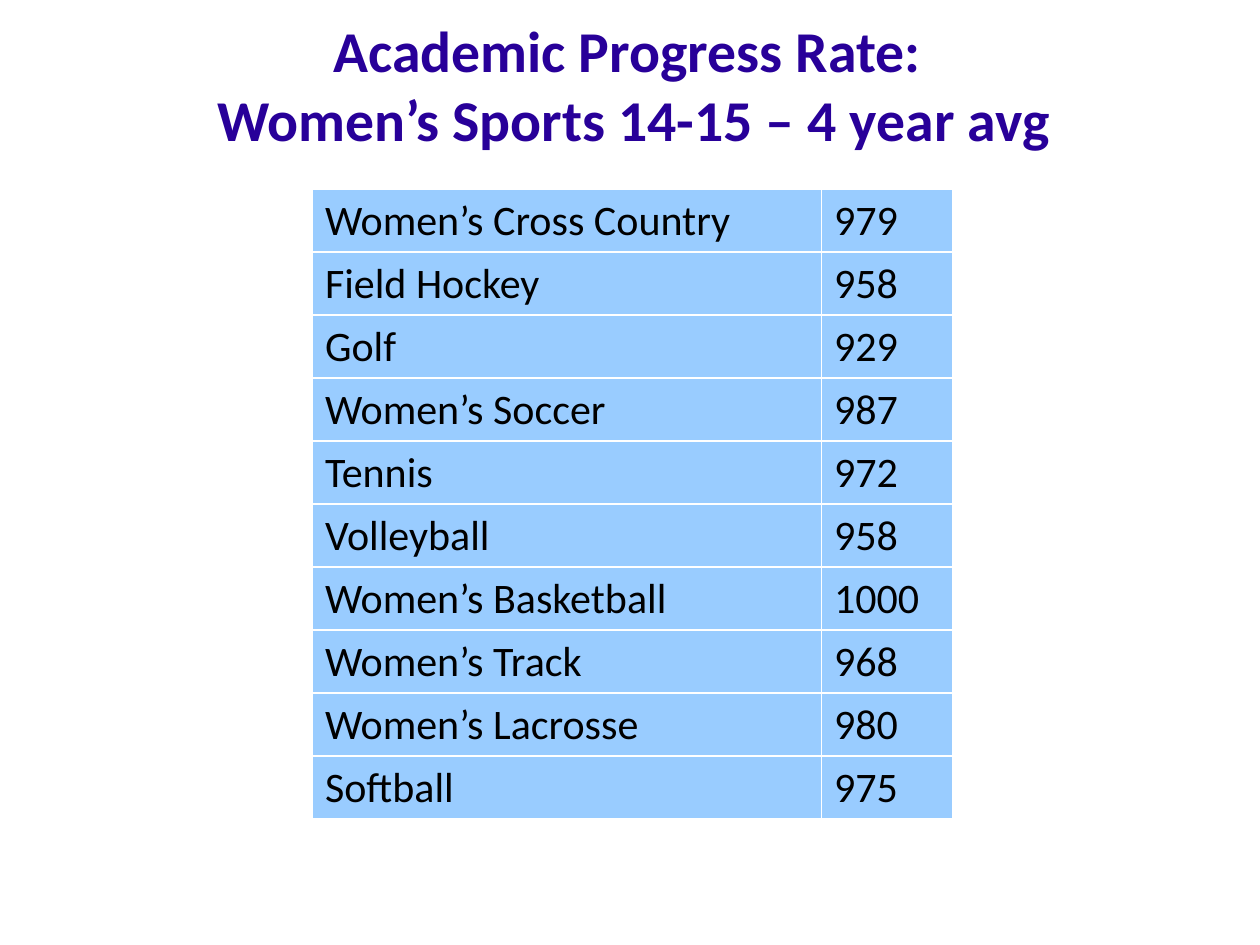
from dataclasses import dataclass

import pptx
import pptx.dml.color
import pptx.enum.text
import pptx.text.text
import pptx.util
from pptx.dml.color import RGBColor
from pptx.util import Inches

FONT = "Calibri"
TITLE_COLOR = RGBColor(0x28, 0x00, 0x99)
TEXT_COLOR = RGBColor(0x00, 0x00, 0x00)
CELL_COLOR = RGBColor(0x99, 0xCC, 0xFF)

TITLE_LINES = ["Academic Progress Rate: ", "Women’s Sports 14-15 – 4 year avg"]
COLUMN_WIDTHS = [4.04, 1.04]
ROW_HEIGHT = 0.5


@dataclass
class SportRate:
    sport: str
    rate: int


SPORT_RATES = [
    SportRate("Women’s Cross Country", 979),
    SportRate("Field Hockey", 958),
    SportRate("Golf", 929),
    SportRate("Women’s Soccer", 987),
    SportRate("Tennis", 972),
    SportRate("Volleyball", 958),
    SportRate("Women’s Basketball", 1000),
    SportRate("Women’s Track", 968),
    SportRate("Women’s Lacrosse", 980),
    SportRate("Softball", 975),
]


def write_text(
    frame: pptx.text.text.TextFrame,
    lines: list[str],
    *,
    size: float,
    color: RGBColor,
    bold: bool = False,
    alignment: pptx.enum.text.PP_ALIGN = pptx.enum.text.PP_ALIGN.LEFT,
    line_spacing: float = 1.0,
) -> None:
    for index, line in enumerate(lines):
        paragraph = frame.add_paragraph() if index else frame.paragraphs[0]
        paragraph.alignment = alignment
        paragraph.line_spacing = line_spacing
        run = paragraph.add_run()
        run.text = line
        run.font.name = FONT
        run.font.size = pptx.util.Pt(size)
        run.font.bold = bold
        run.font.color.rgb = color


def add_title(slide: pptx.slide.Slide) -> None:
    shape = slide.shapes.add_textbox(Inches(0.53), Inches(0.23), Inches(9), Inches(1.43))
    frame = shape.text_frame
    frame.word_wrap = True
    frame.vertical_anchor = pptx.enum.text.MSO_ANCHOR.MIDDLE
    frame.margin_left = frame.margin_top = frame.margin_right = 0
    # The bottom margin lifts the two lines clear of the table
    frame.margin_bottom = Inches(0.56)
    write_text(frame, TITLE_LINES, size=33, color=TITLE_COLOR, bold=True,
               alignment=pptx.enum.text.PP_ALIGN.CENTER)


def add_rate_table(slide: pptx.slide.Slide, rates: list[SportRate]) -> None:
    shape = slide.shapes.add_table(
        len(rates), len(COLUMN_WIDTHS), Inches(2.48), Inches(1.5),
        Inches(sum(COLUMN_WIDTHS)), Inches(ROW_HEIGHT * len(rates)))
    table = shape.table
    table.first_row = table.horz_banding = False
    for column, width in zip(table.columns, COLUMN_WIDTHS):
        column.width = Inches(width)
    for row, entry in zip(table.rows, rates):
        row.height = Inches(ROW_HEIGHT)
        for cell, text in zip(row.cells, (entry.sport, str(entry.rate))):
            cell.fill.solid()
            cell.fill.fore_color.rgb = CELL_COLOR
            cell.margin_left = cell.margin_right = Inches(0.1)
            cell.margin_top = Inches(0.07)
            cell.margin_bottom = Inches(0.05)
            write_text(cell.text_frame, [text], size=24, color=TEXT_COLOR, line_spacing=0.93)


def main() -> None:
    presentation = pptx.Presentation()
    presentation.slide_width = Inches(10)
    presentation.slide_height = Inches(7.5)
    slide = presentation.slides.add_slide(presentation.slide_layouts[6])

    add_title(slide)
    add_rate_table(slide, SPORT_RATES)

    presentation.save("out.pptx")


if __name__ == "__main__":
    main()
